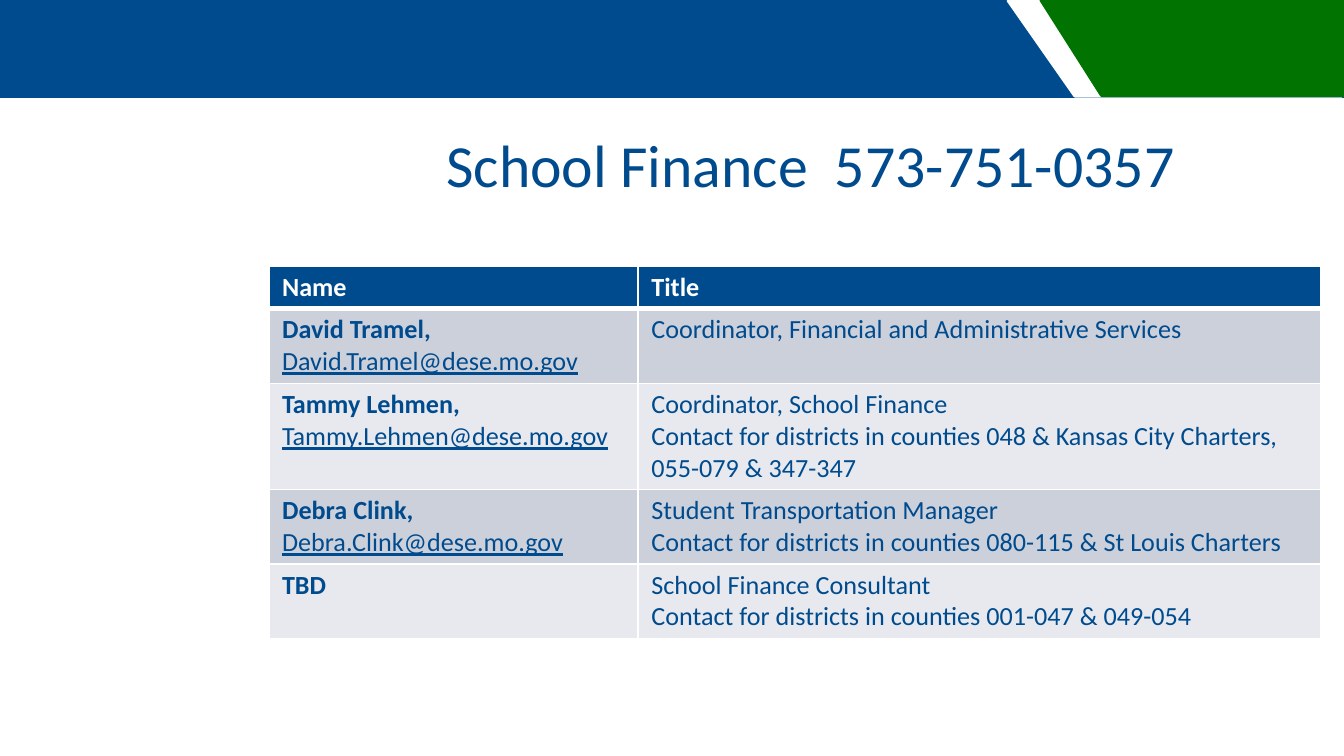
from lxml.etree import SubElement
from pptx import Presentation
from pptx.dml.color import RGBColor
from pptx.enum.shapes import MSO_SHAPE as Shape
from pptx.enum.text import MSO_ANCHOR as Anchor, MSO_AUTO_SIZE as AutoSize, PP_ALIGN as Align
from pptx.oxml.ns import qn
from pptx.util import Cm, Pt

BLUE, GREEN, WHITE = "004B8D", "007300", "FFFFFF"
BANDS = ["CCD0DB", "E7E9EE"]
COLUMN_WIDTHS = [6.98, 12.91]
ROW_HEIGHTS = [0.74, 1.42, 1.88, 1.32, 1.42]
STAFF = [
    ("David Tramel, ", "David.Tramel@dese.mo.gov",
     ["Coordinator, Financial and Administrative Services"]),
    ("Tammy Lehmen, ", "Tammy.Lehmen@dese.mo.gov",
     ["Coordinator, School Finance",
      "Contact for districts in counties 048 & Kansas City Charters, 055-079 & 347-347"]),
    ("Debra Clink, ", "Debra.Clink@dese.mo.gov",
     ["Student Transportation Manager",
      "Contact for districts in counties 080-115 & St Louis Charters"]),
    ("TBD", "",
     ["School Finance Consultant",
      "Contact for districts in counties 001-047 & 049-054"]),
]


def paint(color_format, color):
    """Set a fill or font colour from a hex string."""
    color_format.rgb = RGBColor.from_string(color)


def add_span(para, text, size=14, color=BLUE, bold=False, underline=False):
    """Add one formatted run to a paragraph."""
    span = para.add_run()
    span.text = text
    font = span.font
    font.name, font.size = "Calibri", Pt(size)
    font.bold, font.underline = bold, underline
    paint(font.color, color)


def add_band(page, kind, left, top, width, height, color, rotation=0):
    """Add one plain shape of the header band."""
    band = page.shapes.add_shape(kind, Cm(left), Cm(top), Cm(width), Cm(height))
    band.shadow.inherit = False
    band.rotation = rotation
    band.fill.solid()
    paint(band.fill.fore_color, color)
    if rotation:
        paint(band.line.color, color)
        band.line.width = Pt(2)
    else:
        band.line.fill.background()


def add_title(page, text):
    """Move the title placeholder into place and fill it."""
    box = page.shapes.title
    box.left, box.top, box.width, box.height = Cm(6.35), Cm(2.29), Cm(17.65), Cm(1.47)
    frame = box.text_frame
    frame.auto_size, frame.word_wrap = AutoSize.NONE, True
    frame.vertical_anchor = Anchor.TOP
    para = frame.paragraphs[0]
    para.alignment = Align.CENTER
    properties = para._p.get_or_add_pPr()
    properties.set("marL", str(Cm(0.3)))
    properties.set("indent", "0")
    add_span(para, text, size=32)


def style_cell(cell, color, top=1, bottom=1):
    """Give a cell its margins, fill and white borders."""
    cell.margin_left = cell.margin_right = Cm(0.25)
    cell.margin_top = cell.margin_bottom = Cm(0.1)
    cell.fill.solid()
    paint(cell.fill.fore_color, color)
    properties = cell._tc.get_or_add_tcPr()
    widths = {"a:lnL": 1, "a:lnR": 1, "a:lnT": top, "a:lnB": bottom}
    for place, (tag, width) in enumerate(widths.items()):
        line = SubElement(properties, qn(tag), w=str(Pt(width)))
        SubElement(SubElement(line, qn("a:solidFill")), qn("a:srgbClr"), val=WHITE)
        properties.insert(place, line)


def add_staff_table(page):
    """Add the table of names and titles."""
    frame = page.shapes.add_table(len(ROW_HEIGHTS), len(COLUMN_WIDTHS), Cm(5.08), Cm(5.03),
                                  Cm(sum(COLUMN_WIDTHS)), Cm(sum(ROW_HEIGHTS)))
    table = frame.table
    for column, width in zip(table.columns, COLUMN_WIDTHS):
        column.width = Cm(width)
    for row, height in zip(table.rows, ROW_HEIGHTS):
        row.height = Cm(height)

    for cell, heading in zip(table.rows[0].cells, ["Name", "Title"]):
        style_cell(cell, BLUE, bottom=3)
        add_span(cell.text_frame.paragraphs[0], heading, color=WHITE, bold=True)

    for number, (name, email, duties) in enumerate(STAFF, start=1):
        name_cell, title_cell = table.rows[number].cells
        for cell in (name_cell, title_cell):
            style_cell(cell, BANDS[(number - 1) % 2], top=3 if number == 1 else 1)
        para = name_cell.text_frame.paragraphs[0]
        add_span(para, name, bold=True)
        if email:
            add_span(para, email, underline=True)
        frame = title_cell.text_frame
        for index, duty in enumerate(duties):
            add_span(frame.add_paragraph() if index else frame.paragraphs[0], duty)


def main():
    """Build the contact slide and save it."""
    deck = Presentation()
    deck.slide_width, deck.slide_height = Cm(25.4), Cm(14.29)
    page = deck.slides.add_slide(deck.slide_layouts[5])
    add_band(page, Shape.RECTANGLE, 0, 0, 25.4, 1.85, BLUE)
    add_band(page, Shape.FLOWCHART_MANUAL_INPUT, 21.31, -2.24, 1.8, 6.3, WHITE, 270)
    add_band(page, Shape.FLOWCHART_MANUAL_INPUT, 21.64, -1.96, 1.8, 5.72, GREEN, 270)
    add_title(page, "School Finance  573-751-0357")
    add_staff_table(page)
    deck.save("out.pptx")


if __name__ == "__main__":
    main()
